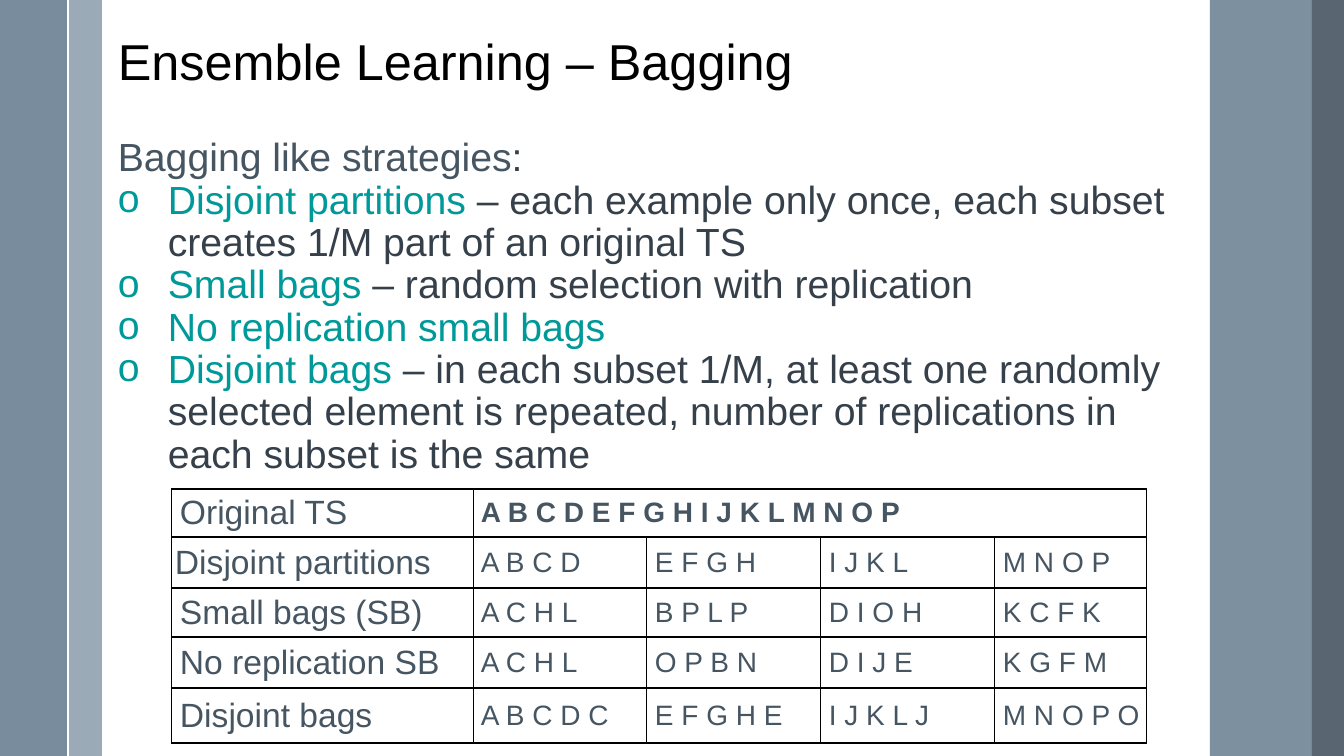
from lxml import etree
from pptx import Presentation
from pptx.dml.color import RGBColor
from pptx.enum.shapes import MSO_CONNECTOR, MSO_SHAPE
from pptx.enum.text import MSO_ANCHOR
from pptx.oxml.ns import qn
from pptx.util import Pt

RECTANGLE = MSO_SHAPE.RECTANGLE
STRAIGHT = MSO_CONNECTOR.STRAIGHT
TOP, MIDDLE = MSO_ANCHOR.TOP, MSO_ANCHOR.MIDDLE

EMU_PER_PX = 914400 / 100.8
WIDTH, HEIGHT = 1344, 756
FONT = "Arial"

BLACK = RGBColor(0x00, 0x00, 0x00)
WHITE = RGBColor(0xFF, 0xFF, 0xFF)
SLATE = RGBColor(0x46, 0x55, 0x62)
DARK_SLATE = RGBColor(0x35, 0x40, 0x4A)
TEAL = RGBColor(0x00, 0x99, 0x99)
PALE_BAND = RGBColor(0x9B, 0xAA, 0xB7)
BLUE_BAND = RGBColor(0x6A, 0x80, 0x93)
DARK_BAND = RGBColor(0x47, 0x55, 0x62)

# left, width, colour, opacity in percent
BANDS = [
    (69, 33, PALE_BAND, 100),
    (0, 67, BLUE_BAND, 90),
    (1210, 102, BLUE_BAND, 87),
    (1312, 32, DARK_BAND, 90),
]

STRATEGIES = [
    ("Disjoint partitions", " – each example only once, each subset creates 1/M part of an original TS"),
    ("Small bags", " – random selection with replication"),
    ("No replication small bags", ""),
    ("Disjoint bags", " – in each subset 1/M, at least one randomly selected element is repeated, "
                      "number of replications in each subset is the same"),
]

COLUMN_WIDTHS = [302, 174, 174, 174, 152]
ROW_HEIGHTS = [48, 51, 49, 51, 55]
TABLE_ROWS = [
    ("Original TS", ["A B C D E F G H I J K L M N O P"]),
    ("Disjoint partitions", ["A B C D", "E F G H", "I J K L", "M N O P"]),
    ("Small bags (SB)", ["A C H L", "B P L P", "D I O H", "K C F K"]),
    ("No replication SB", ["A C H L", "O P B N", "D I J E", "K G F M"]),
    ("Disjoint bags", ["A B C D C", "E F G H E", "I J K L J", "M N O P O"]),
]


def px(length):
    return round(length * EMU_PER_PX)


def add_span(para, text, size=28, color=DARK_SLATE, bold=False):
    span = para.add_run()
    span.text = text
    span.font.name = FONT
    span.font.size = Pt(size)
    span.font.bold = bold
    span.font.color.rgb = color


def add_band(page, left, width, color, opacity):
    band = page.shapes.add_shape(RECTANGLE, px(left), 0, px(width), px(HEIGHT))
    band.shadow.inherit = False
    band.line.fill.background()
    band.fill.solid()
    band.fill.fore_color.rgb = color
    if opacity < 100:
        tint = band.fill._xPr.find(".//" + qn("a:srgbClr"))
        etree.SubElement(tint, qn("a:alpha"), val=str(opacity * 1000))


def add_divider(page, left):
    divider = page.shapes.add_connector(STRAIGHT, px(left), 0, px(left), px(HEIGHT))
    divider.line.color.rgb = WHITE
    divider.line.width = Pt(1.5)
    etree.SubElement(divider._element.spPr, qn("a:effectLst"))


def add_text_frame(page, top, height, anchor):
    box = page.shapes.add_textbox(px(108), px(top), px(1078), px(height))
    frame = box.text_frame
    frame.word_wrap = True
    frame.vertical_anchor = anchor
    frame.paragraphs[0].line_spacing = 0.9
    return frame


def add_bullet(frame, term, explanation):
    para = frame.add_paragraph()
    para.line_spacing = 0.9
    properties = para._p.get_or_add_pPr()
    properties.set("marL", str(px(50)))
    properties.set("indent", str(-px(50)))
    etree.SubElement(properties, qn("a:buFont"), typeface=FONT)
    etree.SubElement(properties, qn("a:buChar"), char="o")
    add_span(para, term, color=TEAL)
    if explanation:
        add_span(para, explanation)


def set_borders(cell, top, bottom):
    properties = cell._tc.get_or_add_tcPr()
    widths = {"a:lnL": 0.75, "a:lnR": 0.75, "a:lnT": top, "a:lnB": bottom}
    for position, (side, width) in enumerate(widths.items()):
        line = etree.Element(qn(side), w=str(Pt(width)))
        fill = etree.SubElement(line, qn("a:solidFill"))
        etree.SubElement(fill, qn("a:srgbClr"), val=str(BLACK))
        properties.insert(position, line)


def fill_cell(cell, text, size, indent, bold=False):
    cell.margin_left = px(indent)
    cell.margin_right = cell.margin_top = cell.margin_bottom = 0
    cell.vertical_anchor = MIDDLE
    add_span(cell.text_frame.paragraphs[0], text, size=size, color=SLATE, bold=bold)


def add_bag_table(page):
    frame = page.shapes.add_table(len(ROW_HEIGHTS), len(COLUMN_WIDTHS), px(171), px(489),
                                  px(sum(COLUMN_WIDTHS)), px(sum(ROW_HEIGHTS)))
    table = frame.table
    table.first_row = table.horz_banding = False
    for column, width in zip(table.columns, COLUMN_WIDTHS):
        column.width = px(width)
    last = len(ROW_HEIGHTS) - 1
    for index, (row, height) in enumerate(zip(table.rows, ROW_HEIGHTS)):
        row.height = px(height)
        for cell in row.cells:
            cell.fill.background()
            set_borders(cell, top=2 if index == 0 else 1, bottom=2 if index == last else 1)
    table.cell(0, 1).merge(table.cell(0, len(COLUMN_WIDTHS) - 1))

    for index, (label, bags) in enumerate(TABLE_ROWS):
        fill_cell(table.cell(index, 0), label, 24, indent=4 if index == 1 else 9)
        for column, letters in enumerate(bags, start=1):
            fill_cell(table.cell(index, column), letters, 20, indent=8, bold=index == 0)


def main():
    deck = Presentation()
    deck.slide_width, deck.slide_height = px(WIDTH), px(HEIGHT)
    page = deck.slides.add_slide(deck.slide_layouts[6])

    # Side bands
    for band in BANDS:
        add_band(page, *band)
    add_divider(page, 68)

    # Title
    title = add_text_frame(page, -4, 137, MIDDLE)
    add_span(title.paragraphs[0], "Ensemble Learning – Bagging", size=36, color=BLACK)

    # Strategies
    body = add_text_frame(page, 133, 342, TOP)
    add_span(body.paragraphs[0], "Bagging like strategies", color=SLATE)
    add_span(body.paragraphs[0], ":")
    for term, explanation in STRATEGIES:
        add_bullet(body, term, explanation)

    # Example subsets
    add_bag_table(page)

    deck.save("out.pptx")


if __name__ == "__main__":
    main()
